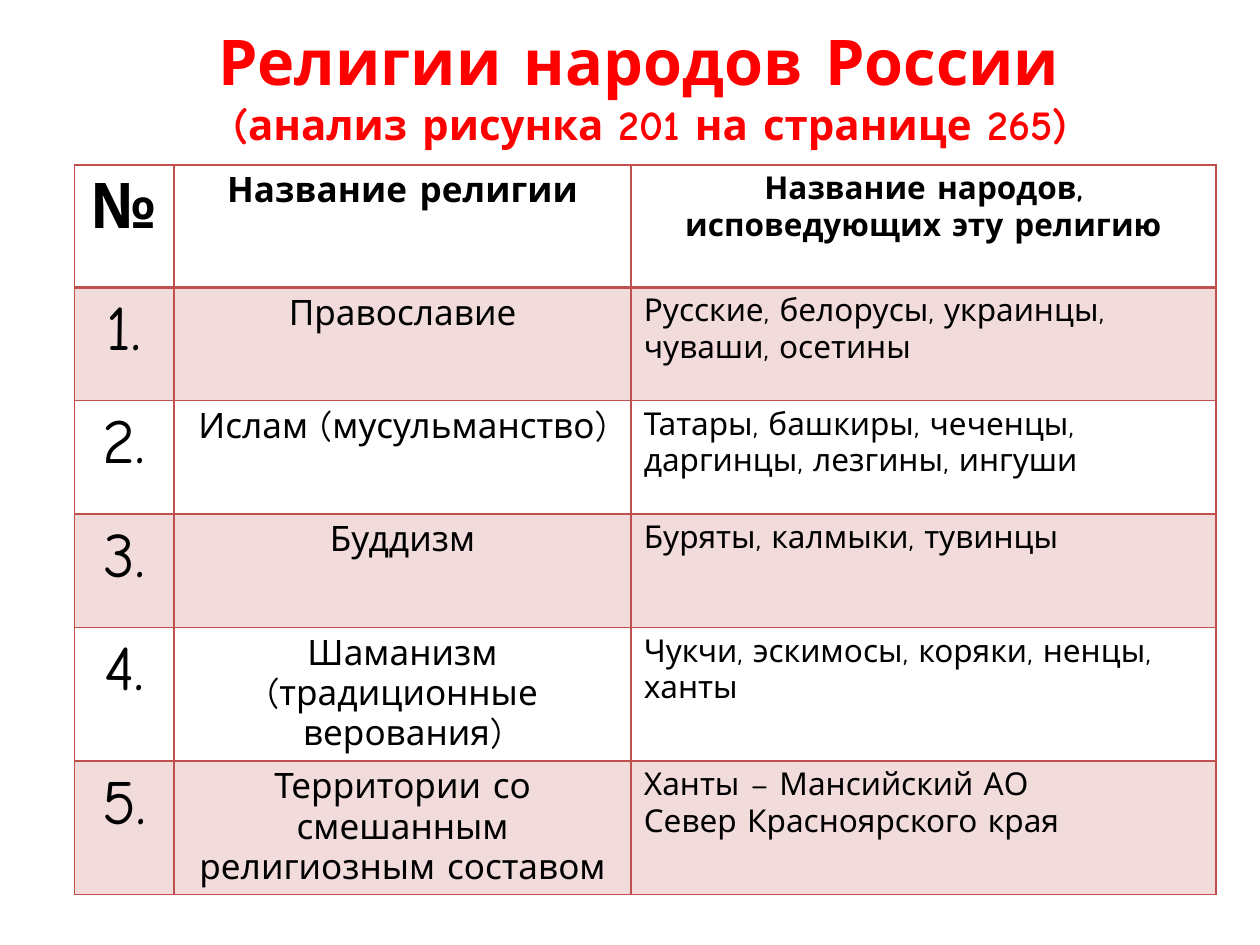
from lxml.etree import SubElement
from pptx import Presentation
from pptx.dml.color import RGBColor
from pptx.enum.text import MSO_ANCHOR, MSO_AUTO_SIZE, PP_ALIGN
from pptx.oxml.ns import qn
from pptx.util import Inches, Pt

RED = RGBColor(0xFF, 0x00, 0x00)
BLACK = RGBColor(0x00, 0x00, 0x00)
BRICK = RGBColor(0xC0, 0x50, 0x4D)
FONT = "Comic Neue"
TITLE_ONLY = 5

TITLE_LINES = [
    ("Религии народов России ", 36),
    ("(анализ рисунка 201 на странице 265)", 24),
]
HEADER = ("№", "Название религии", "Название народов, исповедующих эту религию")
RELIGIONS = [
    ("Православие", "Русские, белорусы, украинцы, чуваши, осетины"),
    ("Ислам (мусульманство)", "Татары, башкиры, чеченцы, даргинцы, лезгины, ингуши"),
    ("Буддизм", "Буряты, калмыки, тувинцы"),
    ("Шаманизм (традиционные верования)", "Чукчи, эскимосы, коряки, ненцы, ханты"),
    ("Территории со смешанным религиозным составом",
     "Ханты – Мансийский АО\nСевер Красноярского края"),
]
COLUMN_WIDTHS = (0.79, 3.63, 4.64)
COLUMN_SIZES = (36, 20, 18)
HEADER_HEIGHT, ROW_HEIGHT = 0.97, 0.9


class SlideBuilder:
    def __init__(self, slide, font):
        self.slide = slide
        self.font = font

    def add_lines(self, text_frame, lines, color, bold, alignment):
        """Write (text, size) pairs, one paragraph each."""
        for index, (text, size) in enumerate(lines):
            paragraph = text_frame.paragraphs[0] if index == 0 else text_frame.add_paragraph()
            paragraph.alignment = alignment
            run = paragraph.add_run()
            run.text = text
            run.font.name = self.font
            run.font.size = Pt(size)
            run.font.bold = bold
            run.font.color.rgb = color

    def title(self, lines, left, top, width, height):
        shape = self.slide.shapes.title
        shape.left, shape.top = Inches(left), Inches(top)
        shape.width, shape.height = Inches(width), Inches(height)
        text_frame = shape.text_frame
        text_frame.word_wrap = True
        text_frame.auto_size = MSO_AUTO_SIZE.NONE
        text_frame.vertical_anchor = MSO_ANCHOR.TOP
        self.add_lines(text_frame, lines, RED, True, PP_ALIGN.CENTER)

    def border(self, cell, side, width):
        line = SubElement(cell._tc.get_or_add_tcPr(), qn(f"a:ln{side}"), w=str(Pt(width)))
        fill = SubElement(line, qn("a:solidFill"))
        SubElement(fill, qn("a:srgbClr"), val=str(BRICK))

    def tint(self, cell, percent):
        """Fill a cell with the accent colour at the given opacity."""
        cell.fill.solid()
        cell.fill.fore_color.rgb = BRICK
        color = cell._tc.tcPr.find(f"{qn('a:solidFill')}/{qn('a:srgbClr')}")
        SubElement(color, qn("a:alpha"), val=str(percent * 1000))

    def table(self, rows, left, top):
        heights = [HEADER_HEIGHT] + [ROW_HEIGHT] * (len(rows) - 1)
        table = self.slide.shapes.add_table(
            len(rows), len(COLUMN_WIDTHS), Inches(left), Inches(top),
            Inches(sum(COLUMN_WIDTHS)), Inches(sum(heights))).table
        table.first_row = table.horz_banding = False
        for column, width in zip(table.columns, COLUMN_WIDTHS):
            column.width = Inches(width)
        for row, height in zip(table.rows, heights):
            row.height = Inches(height)
        for row_index, texts in enumerate(rows):
            for column_index, text in enumerate(texts):
                self.cell(table.cell(row_index, column_index), text, row_index, column_index)

    def cell(self, cell, text, row_index, column_index):
        is_header = row_index == 0
        is_list = column_index == 2 and not is_header
        size = COLUMN_SIZES[column_index]
        self.add_lines(cell.text_frame, [(line, size) for line in text.split("\n")],
                       BLACK, is_header, PP_ALIGN.LEFT if is_list else PP_ALIGN.CENTER)
        widths = {"L": 1, "R": 1, "T": 2 if row_index == 1 else 1, "B": 2 if is_header else 1}
        for side, width in widths.items():
            self.border(cell, side, width)
        if row_index % 2:
            self.tint(cell, 20)
        else:
            cell.fill.background()


def main():
    presentation = Presentation()
    presentation.slide_width, presentation.slide_height = Inches(10), Inches(7.5)
    slide = presentation.slides.add_slide(presentation.slide_layouts[TITLE_ONLY])
    builder = SlideBuilder(slide, FONT)
    builder.title(TITLE_LINES, 0.83, 0.13, 8.66, 1.72)
    numbered = [(f"{number}.", *religion) for number, religion in enumerate(RELIGIONS, 1)]
    builder.table([HEADER, *numbered], 0.59, 1.31)
    presentation.save("out.pptx")


if __name__ == "__main__":
    main()
